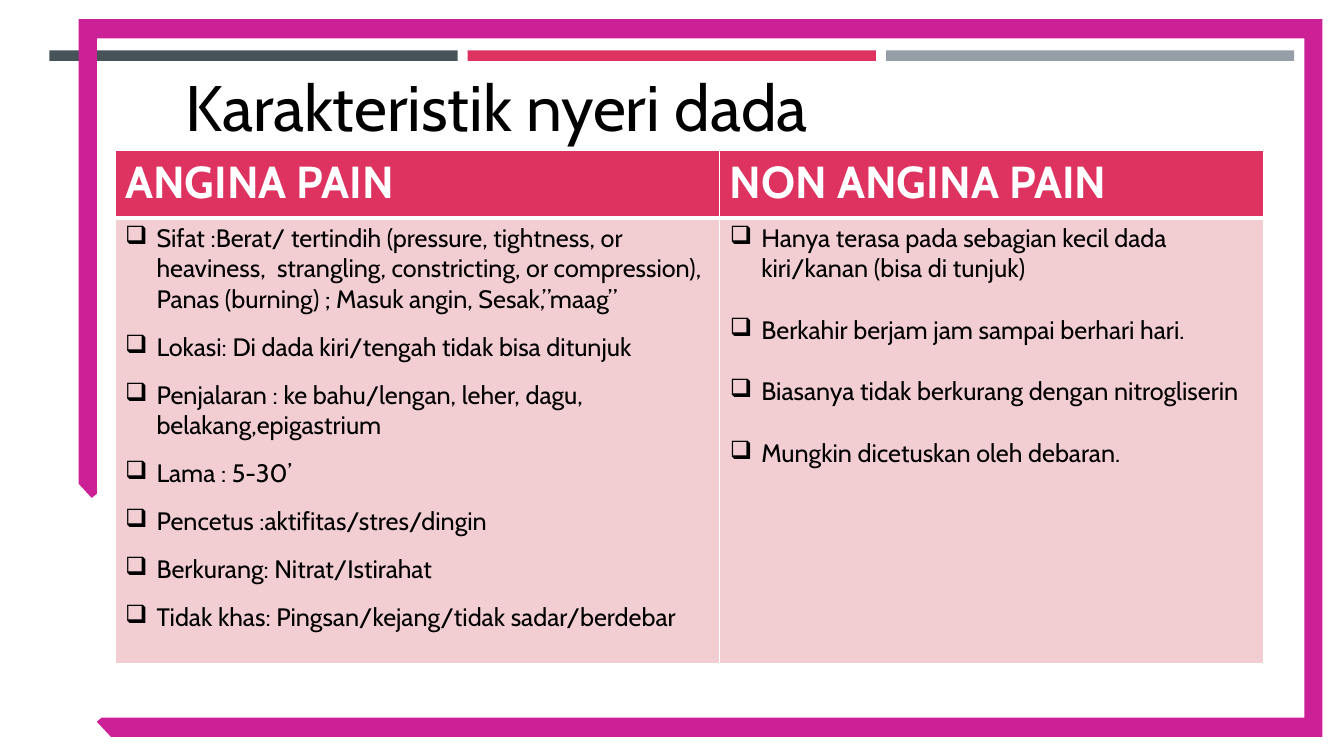
from dataclasses import dataclass

from lxml.etree import SubElement
from pptx import Presentation
from pptx.dml.color import RGBColor as RGB
from pptx.enum.shapes import MSO_SHAPE as SHAPE
from pptx.enum.text import MSO_ANCHOR as ANCHOR, MSO_AUTO_SIZE as AUTO, PP_ALIGN as ALIGN
from pptx.oxml import parse_xml
from pptx.oxml.ns import nsdecls, qn
from pptx.util import Pt


@dataclass(frozen=True)
class Theme:
    font: str = "Cabin"
    slate: str = "465359"
    rose: str = "DE3261"
    grey: str = "969FA7"
    magenta: str = "CC2097"
    blush: str = "F2CED2"
    white: str = "FFFFFF"
    black: str = "000000"
    title_size: float = 45.9
    header_size: float = 32
    body_size: float = 18


T = Theme()

FRAME = [
    (56.2, 13.7), (944.6, 13.7), (944.6, 526.3), (79.2, 526.3), (69.1, 515.5),
    (72.7, 512.6), (931.7, 512.6), (931.7, 27.4), (69.1, 27.4), (69.1, 352.8),
    (65.5, 355.7), (56.2, 345.6),
]

ANGINA = [
    "Sifat :Berat/ tertindih (pressure, tightness, or heaviness,  strangling, "
    "constricting, or compression), Panas (burning) ; Masuk angin, Sesak,”maag”",
    "Lokasi: Di dada kiri/tengah tidak bisa ditunjuk",
    "Penjalaran : ke bahu/lengan, leher, dagu, belakang,epigastrium",
    "Lama : 5-30’",
    "Pencetus :aktifitas/stres/dingin",
    "Berkurang: Nitrat/Istirahat",
    "Tidak khas: Pingsan/kejang/tidak sadar/berdebar",
]

NON_ANGINA = [
    "Hanya terasa pada sebagian kecil dada kiri/kanan (bisa di tunjuk)",
    "Berkahir berjam jam sampai berhari hari.",
    "Biasanya tidak berkurang dengan nitrogliserin",
    "Mungkin dicetuskan oleh debaran.",
]

COLUMNS = [("ANGINA PAIN", ANGINA, 432, 12.2), ("NON ANGINA PAIN", NON_ANGINA, 388.8, 22)]


def paint(shape, color):
    shape.shadow.inherit = False
    shape.fill.solid()
    shape.fill.fore_color.rgb = RGB.from_string(color)
    shape.line.fill.background()


def add_bars(s):
    for i, color in enumerate((T.slate, T.rose, T.grey)):
        bar = s.shapes.add_shape(SHAPE.RECTANGLE, Pt(35.3 + 298.8 * i), Pt(36), Pt(291.6), Pt(7.5))
        paint(bar, color)


def add_frame(s):
    start, *rest = [(Pt(x), Pt(y)) for x, y in FRAME]
    outline = s.shapes.build_freeform(*start)
    outline.add_line_segments(rest, close=True)
    paint(outline.convert_to_shape(), T.magenta)


def write(p, text, size=T.body_size, color=T.black, bold=False, bullet=None, before=0):
    if bullet:
        pPr = p._p.get_or_add_pPr()
        pPr.set("marL", str(Pt(22.5)))
        pPr.set("indent", str(-Pt(22.5)))
        SubElement(pPr, qn("a:buChar")).set("char", bullet)
    p.alignment = ALIGN.LEFT
    p.space_before = Pt(before)
    r = p.add_run()
    r.text = text
    r.font.name = T.font
    r.font.size = Pt(size)
    r.font.bold = bold
    r.font.color.rgb = RGB.from_string(color)


def set_title(s, text):
    title = s.shapes.title
    title.left, title.top, title.width, title.height = Pt(125.3), Pt(50.4), Pt(805), Pt(56.9)
    tf = title.text_frame
    tf.word_wrap = True
    tf.auto_size = AUTO.NONE
    tf.vertical_anchor = ANCHOR.MIDDLE
    p = tf.paragraphs[0]
    p.line_spacing = 0.9
    write(p, text, size=T.title_size)


def style_cell(cell, color, **widths):
    cell.fill.solid()
    cell.fill.fore_color.rgb = RGB.from_string(color)
    tcPr = cell._tc.get_or_add_tcPr()
    for i, side in enumerate("LRTB"):
        tcPr.insert(i, parse_xml(
            f'<a:ln{side} {nsdecls("a")} w="{Pt(widths.get(side, 1))}"><a:solidFill>'
            f'<a:srgbClr val="{T.white}"/></a:solidFill></a:ln{side}>'))


def add_pain_table(s):
    table = s.shapes.add_table(2, 2, Pt(82.1), Pt(107.3), Pt(820.8), Pt(366.5)).table
    table.horz_banding = False
    table.rows[0].height, table.rows[1].height = Pt(48.2), Pt(318.3)
    for col, (heading, items, width, gap) in enumerate(COLUMNS):
        table.columns[col].width = Pt(width)
        header, body = table.cell(0, col), table.cell(1, col)
        style_cell(header, T.rose, B=3)
        style_cell(body, T.blush, T=3)
        write(header.text_frame.paragraphs[0], heading, size=T.header_size, color=T.white, bold=True)
        tf = body.text_frame
        for i, item in enumerate(items):
            p = tf.add_paragraph() if i else tf.paragraphs[0]
            write(p, item, bullet="❑", before=gap if i else 0)


def main():
    prs = Presentation()
    prs.slide_width, prs.slide_height = Pt(960), Pt(540)
    s = prs.slides.add_slide(prs.slide_layouts[5])
    add_bars(s)
    add_frame(s)
    set_title(s, "Karakteristik nyeri dada")
    add_pain_table(s)
    prs.save("out.pptx")


if __name__ == "__main__":
    main()
